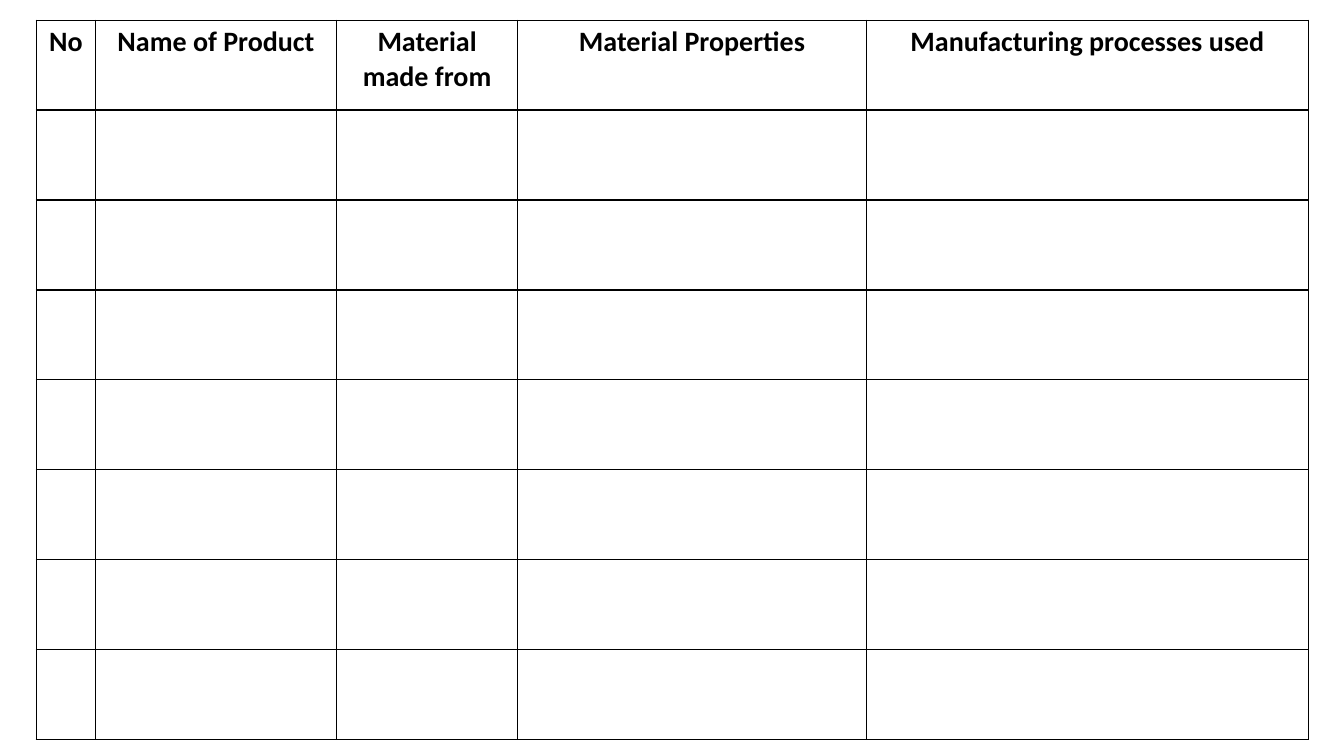
from lxml.etree import SubElement
from pptx import Presentation
from pptx.dml.color import RGBColor as Rgb
from pptx.enum.text import MSO_ANCHOR as Anchor, PP_ALIGN as Align
from pptx.oxml.ns import qn
from pptx.util import Inches, Pt

COLORS = {"ink": "000000", "paper": "FFFFFF"}
HEADINGS = {
    "No": 0.59,
    "Name of Product": 2.39,
    "Material made from": 1.8,
    "Material Properties": 3.46,
    "Manufacturing processes used": 4.39,
}
PRODUCT_ROWS = 7


class Worksheet:
    """Holds the style and the current slide of a printable worksheet."""

    width, height = 13.33, 7.5
    heading_format = {"name": "Calibri", "size": Pt(20), "bold": True}
    plain_table = {"first_row": False, "horz_banding": False}
    border_width = Pt(1)

    def __init__(self):
        self.deck = Presentation()
        self.deck.slide_width = Inches(self.width)
        self.deck.slide_height = Inches(self.height)
        self.slide = self.deck.slides.add_slide(self.deck.slide_layouts[6])

    def across(self, share):
        return Inches(self.width * share)

    def down(self, share):
        return Inches(self.height * share)

    def border(self, cell):
        properties = cell._tc.get_or_add_tcPr()
        for side in ("lnL", "lnR", "lnT", "lnB"):
            line = SubElement(properties, qn(f"a:{side}"), w=str(self.border_width))
            ink = SubElement(line, qn("a:solidFill"))
            SubElement(ink, qn("a:srgbClr"), val=COLORS["ink"])

    def heading(self, cell, text):
        cell.vertical_anchor = Anchor.TOP
        paragraph = cell.text_frame.paragraphs[0]
        paragraph.alignment = Align.CENTER
        run = paragraph.add_run()
        run.text = text
        for name, value in self.heading_format.items():
            setattr(run.font, name, value)
        run.font.color.rgb = Rgb.from_string(COLORS["ink"])

    def table(self, headings, blank_rows, left, top, width, height):
        grid = self.slide.shapes.add_table(
            blank_rows + 1, len(headings),
            self.across(left), self.down(top), self.across(width), self.down(height),
        ).table
        for name, value in self.plain_table.items():
            setattr(grid, name, value)
        for cell in grid.iter_cells():
            self.border(cell)
            cell.fill.solid()
            cell.fill.fore_color.rgb = Rgb.from_string(COLORS["paper"])
        total = sum(headings.values())
        for index, (text, weight) in enumerate(headings.items()):
            grid.columns[index].width = self.across(width * weight / total)
            self.heading(grid.cell(0, index), text)


def main():
    worksheet = Worksheet()
    worksheet.table(HEADINGS, PRODUCT_ROWS, 0.36 / 13.33, 0.2 / 7.5, 12.62 / 13.33, 7.14 / 7.5)
    worksheet.deck.save("out.pptx")


if __name__ == "__main__":
    main()
